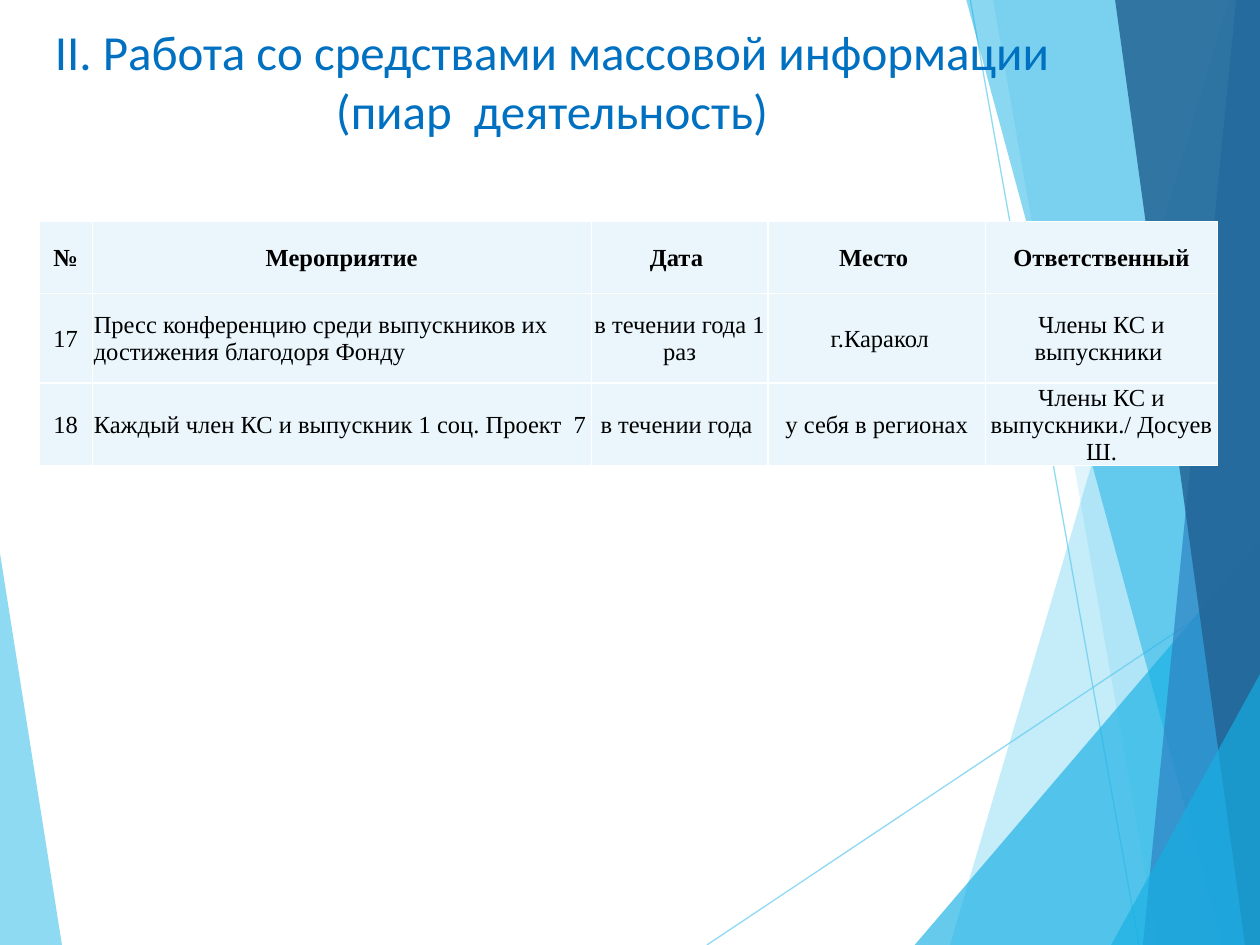
from typing import NamedTuple

from lxml.etree import SubElement
from pptx import Presentation
from pptx.dml.color import RGBColor
from pptx.enum.text import MSO_ANCHOR, PP_ALIGN
from pptx.oxml.ns import qn
from pptx.util import Cm, Pt

HUES = {
    "sky": "5FCBEF",
    "cyan": "17B0E4",
    "blue": "2E83C3",
    "navy": "226292",
    "title": "0070C0",
    "cell": "EAF6FC",
    "text": "000000",
    "edge": "FFFFFF",
}
WIDE, HIGH = 25.4, 19.05


class Facet(NamedTuple):
    points: list[tuple[float, float]]
    hue: str
    alpha: int


class Ray(NamedTuple):
    start: tuple[float, float]
    end: tuple[float, float]


def band(top: float, foot: float, hue: str, alpha: int) -> Facet:
    """Full-height facet that reaches the right edge of the slide."""
    return Facet([(top, 0), (foot, HIGH), (WIDE, HIGH), (WIDE, 0)], hue, alpha)


def wedge(foot: float, peak: float, hue: str, alpha: int) -> Facet:
    """Triangle in the lower right corner."""
    return Facet([(foot, HIGH), (WIDE, peak), (WIDE, HIGH)], hue, alpha)


RAYS = [
    Ray((14.25, HIGH), (WIDE, 11.61)),
    Ray((19.56, 0), (22.96, HIGH)),
]
LEFT = Facet([(0, 11.15), (1.25, HIGH), (0, HIGH)], "sky", 70)
RIGHT = [
    band(24.77, 19.15, "sky", 36),
    band(20.02, 23.34, "sky", 20),
    wedge(18.44, 10.9, "cyan", 66),
    band(19.48, 24.64, "cyan", 50),
    band(24.92, 23.04, "blue", 70),
    band(22.48, 25.1, "navy", 82),
    wedge(22.4, 13.59, "cyan", 66),
]

COLS = [1.07, 10.06, 3.56, 4.39, 4.67]
TALL = [1.45, 1.8, 1.24]
ROWS = [
    ["№", "Мероприятие", "Дата ", "Место ", "Ответственный"],
    ["17", "Пресс конференцию среди выпускников их достижения благодоря Фонду",
     "в течении года 1 раз", " г.Каракол", "Члены КС и выпускники "],
    ["18", "Каждый член КС и выпускник 1 соц. Проект  7",
     "в течении года ", "у себя в регионах", "Члены КС и выпускники./ Досуев Ш."],
]


def rgb(hue: str) -> RGBColor:
    return RGBColor.from_string(HUES[hue])


def fade(fill, alpha: int) -> None:
    color = fill._xPr.find(".//" + qn("a:srgbClr"))
    SubElement(color, qn("a:alpha"), val=str(alpha * 1000))


def write(frame, text: str, font: str, size: int, hue: str,
          align: PP_ALIGN, bold: bool = False) -> None:
    para = frame.paragraphs[0]
    para.alignment = align
    run = para.add_run()
    run.text = text
    run.font.name = font
    run.font.size = Pt(size)
    run.font.bold = bold
    run.font.color.rgb = rgb(hue)


def draw_facet(slide, facet: Facet) -> None:
    (x, y), *rest = [(Cm(a), Cm(b)) for a, b in facet.points]
    pen = slide.shapes.build_freeform(x, y)
    pen.add_line_segments(rest, close=True)
    shape = pen.convert_to_shape()
    shape.shadow.inherit = False
    shape.fill.solid()
    shape.fill.fore_color.rgb = rgb(facet.hue)
    fade(shape.fill, facet.alpha)
    shape.line.fill.background()


def draw_ray(slide, ray: Ray) -> None:
    ends = [Cm(n) for n in ray.start + ray.end]
    line = slide.shapes.add_connector(1, *ends)
    line.line.width = Pt(0.75)
    line.line.color.rgb = rgb("sky")
    fade(line.line.fill, 70)
    SubElement(line._element.spPr, qn("a:effectLst"))


def edge_cell(cell) -> None:
    props = cell._tc.get_or_add_tcPr()
    for spot, side in enumerate(("lnL", "lnR", "lnT", "lnB")):
        line = SubElement(props, qn("a:" + side), w=str(Pt(1)))
        fill = SubElement(line, qn("a:solidFill"))
        SubElement(fill, qn("a:srgbClr"), val=HUES["edge"])
        props.insert(spot, line)


def draw_cell(cell, text: str, align: PP_ALIGN, bold: bool) -> None:
    cell.fill.solid()
    cell.fill.fore_color.rgb = rgb("cell")
    cell.vertical_anchor = MSO_ANCHOR.MIDDLE
    cell.margin_left = cell.margin_right = cell.margin_top = Cm(0.03)
    cell.margin_bottom = 0
    edge_cell(cell)
    write(cell.text_frame, text, "Times New Roman", 14, "text", align, bold)


def draw_table(slide) -> None:
    table = slide.shapes.add_table(
        len(ROWS), len(COLS), Cm(0.79), Cm(4.47),
        Cm(sum(COLS)), Cm(sum(TALL))).table
    table.first_row = table.horz_banding = False
    for col, width in zip(table.columns, COLS):
        col.width = Cm(width)
    for r, (row, height) in enumerate(zip(ROWS, TALL)):
        table.rows[r].height = Cm(height)
        for c, text in enumerate(row):
            # Event names are flush left below the header
            flush = r > 0 and c == 1
            align = PP_ALIGN.LEFT if flush else PP_ALIGN.CENTER
            draw_cell(table.cell(r, c), text, align, r == 0)


def draw_title(slide) -> None:
    title = slide.shapes.title
    title.left, title.top = Cm(0.43), Cm(0.3)
    title.width, title.height = Cm(21.39), Cm(3.1)
    frame = title.text_frame
    frame.word_wrap = True
    frame.vertical_anchor = MSO_ANCHOR.TOP
    write(frame, "II. Работа со средствами массовой информации (пиар  деятельность)",
          "Calibri", 28, "title", PP_ALIGN.CENTER)
    # Bring the title in front of the facets
    slide.shapes._spTree.append(title._element)


def main() -> None:
    deck = Presentation()
    deck.slide_width, deck.slide_height = Cm(WIDE), Cm(HIGH)
    slide = deck.slides.add_slide(deck.slide_layouts[5])

    # Backdrop
    draw_facet(slide, LEFT)
    for ray in RAYS:
        draw_ray(slide, ray)
    for facet in RIGHT:
        draw_facet(slide, facet)

    # Content
    draw_title(slide)
    draw_table(slide)
    deck.save("out.pptx")


if __name__ == "__main__":
    main()
